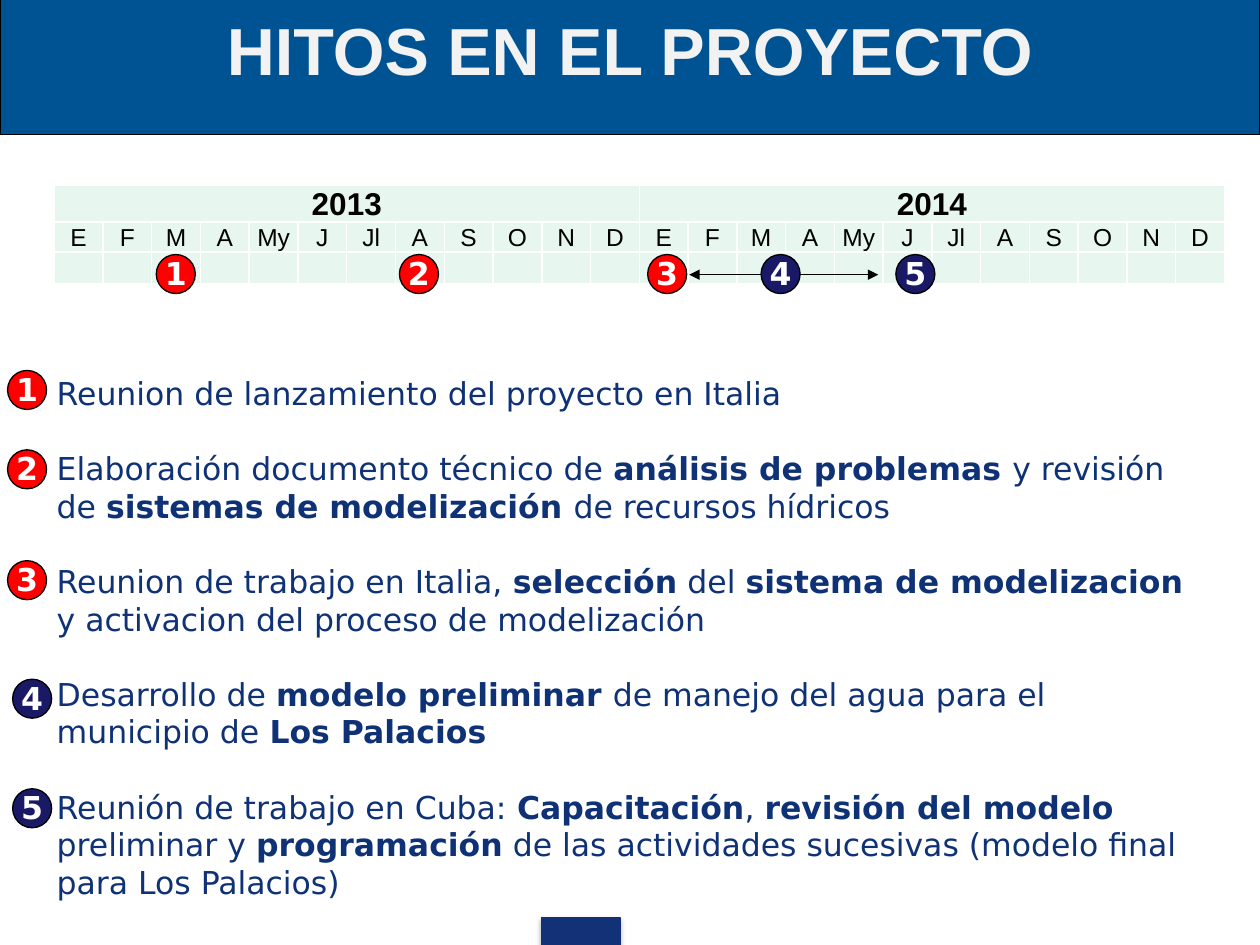
from dataclasses import dataclass

from lxml import etree
from pptx import Presentation
from pptx.dml.color import RGBColor
from pptx.enum.shapes import MSO_CONNECTOR, MSO_SHAPE
from pptx.enum.text import MSO_ANCHOR, MSO_AUTO_SIZE, PP_ALIGN
from pptx.oxml.ns import qn
from pptx.util import Inches, Pt

CENTER, LEFT = PP_ALIGN.CENTER, PP_ALIGN.LEFT
TOP, MIDDLE, BOTTOM = MSO_ANCHOR.TOP, MSO_ANCHOR.MIDDLE, MSO_ANCHOR.BOTTOM
NO_FIT = MSO_AUTO_SIZE.NONE
RECTANGLE, OVAL = MSO_SHAPE.RECTANGLE, MSO_SHAPE.OVAL
STRAIGHT = MSO_CONNECTOR.STRAIGHT


@dataclass(frozen=True)
class Theme:
    banner: str = "005392"
    title: str = "F2F2F2"
    body: str = "0F3277"
    accent: str = "133176"
    cell: str = "E7F6EF"
    done: str = "FF0000"
    planned: str = "191966"
    black: str = "000000"
    white: str = "FFFFFF"
    heading_font: str = "Arial"
    body_font: str = "DejaVu Sans"
    title_size: float = 38
    text_size: float = 18
    month_size: float = 14
    line_pitch: float = 21.5
    outline: float = 0.75


class SlideBuilder:
    def __init__(self, slide, theme):
        self.slide = slide
        self.theme = theme

    def style_font(self, font, name, size, color, bold=False):
        font.name, font.size, font.bold = name, Pt(size), bold
        font.color.rgb = RGBColor.from_string(color)

    def paint(self, shape, fill, line):
        shape.fill.solid()
        shape.fill.fore_color.rgb = RGBColor.from_string(fill)
        shape.line.color.rgb = RGBColor.from_string(line)
        shape.line.width = Pt(self.theme.outline)

    def place(self, shape, left, top, width, height):
        shape.left, shape.top = Inches(left), Inches(top)
        shape.width, shape.height = Inches(width), Inches(height)

    def title(self, text, box):
        t = self.theme
        banner = self.slide.shapes.title
        self.place(banner, *box)
        self.paint(banner, t.banner, t.black)
        frame = banner.text_frame
        frame.text = text
        frame.auto_size, frame.vertical_anchor = NO_FIT, TOP
        frame.margin_top = Inches(0.1)
        heading = frame.paragraphs[0]
        heading.alignment = CENTER
        self.style_font(heading.runs[0].font, t.heading_font, t.title_size, t.title, True)

    def body(self, items, box):
        """Write one paragraph per item; ** switches bold on and off."""
        t = self.theme
        body = self.slide.placeholders[1]
        self.place(body, *box)
        frame = body.text_frame
        frame.auto_size, frame.vertical_anchor, frame.word_wrap = NO_FIT, TOP, True
        for i, item in enumerate(items):
            paragraph = frame.add_paragraph() if i else frame.paragraphs[0]
            paragraph.alignment = LEFT
            paragraph.line_spacing = Pt(t.line_pitch)
            paragraph.space_before = Pt(t.line_pitch if i else 0)
            paragraph.space_after = Pt(0)
            properties = paragraph._p.get_or_add_pPr()
            properties.set("marL", "0")
            properties.set("indent", "0")
            etree.SubElement(properties, qn("a:buNone"))
            for j, piece in enumerate(item.split("**")):
                if piece:
                    run = paragraph.add_run()
                    run.text = piece
                    self.style_font(run.font, t.body_font, t.text_size, t.body, j % 2 == 1)

    def footer_mark(self, box):
        mark = self.slide.shapes.add_shape(RECTANGLE, *map(Inches, box))
        self.paint(mark, self.theme.accent, self.theme.accent)
        effects = etree.SubElement(mark._element.spPr, qn("a:effectLst"))
        shadow = etree.SubElement(effects, qn("a:outerShdw"), blurRad=str(Pt(3.1)),
                                  dist=str(Pt(1.8)), dir="5400000", rotWithShape="0")
        color = etree.SubElement(shadow, qn("a:srgbClr"), val=self.theme.black)
        etree.SubElement(color, qn("a:alpha"), val="35000")

    def cell(self, cell, text, size, bold=False):
        t = self.theme
        cell.margin_left = cell.margin_right = cell.margin_top = Inches(0.01)
        cell.margin_bottom = 0
        cell.vertical_anchor = BOTTOM
        properties = cell._tc.get_or_add_tcPr()
        for side in ("lnL", "lnR", "lnT", "lnB"):
            border = etree.SubElement(properties, qn(f"a:{side}"), w=str(Pt(1)))
            fill = etree.SubElement(border, qn("a:solidFill"))
            etree.SubElement(fill, qn("a:srgbClr"), val=t.white)
        cell.fill.solid()
        cell.fill.fore_color.rgb = RGBColor.from_string(t.cell)
        paragraph = cell.text_frame.paragraphs[0]
        paragraph.alignment = CENTER
        if text:
            paragraph.text = text
            self.style_font(paragraph.runs[0].font, t.heading_font, size, t.black, bold)
        else:
            etree.SubElement(paragraph._p, qn("a:endParaRPr"), sz=str(size * 100))

    def calendar(self, years, months, box, row_heights):
        t = self.theme
        count = len(years) * len(months)
        table = self.slide.shapes.add_table(len(row_heights), count, *map(Inches, box)).table
        table.first_row = table.horz_banding = False
        for column in table.columns:
            column.width = Inches(box[2] / count)
        for row, height in zip(table.rows, row_heights):
            row.height = Inches(height)
        for i in range(count):
            year, month = divmod(i, len(months))
            self.cell(table.cell(0, i), "" if month else years[year], t.text_size, True)
            self.cell(table.cell(1, i), months[month], t.month_size)
            self.cell(table.cell(2, i), "", t.month_size)
        for first in range(0, count, len(months)):
            table.cell(0, first).merge(table.cell(0, first + len(months) - 1))

    def badge(self, number, left, top):
        t = self.theme
        badge = self.slide.shapes.add_shape(OVAL, *map(Inches, (left, top, 0.31, 0.31)))
        badge.shadow.inherit = False
        self.paint(badge, t.done if number <= 3 else t.planned, t.black)
        frame = badge.text_frame
        frame.margin_left = frame.margin_right = frame.margin_top = 0
        frame.margin_bottom = Inches(0.02)
        frame.word_wrap, frame.vertical_anchor = False, MIDDLE
        frame.text = str(number)
        label = frame.paragraphs[0]
        label.alignment = CENTER
        self.style_font(label.runs[0].font, t.body_font, t.text_size, t.white, True)

    def double_arrow(self, start, end, y):
        ends = map(Inches, (start, y, end, y))
        arrow = self.slide.shapes.add_connector(STRAIGHT, *ends)
        arrow.line.color.rgb = RGBColor.from_string(self.theme.black)
        arrow.line.width = Pt(self.theme.outline)
        line = arrow.line._get_or_add_ln()
        for tip in ("headEnd", "tailEnd"):
            etree.SubElement(line, qn(f"a:{tip}"), type="triangle")
        etree.SubElement(arrow._element.spPr, qn("a:effectLst"))


YEARS = ["2013", "2014"]
MONTHS = "E F M A My J Jl A S O N D".split()
MILESTONES = [
    "Reunion de lanzamiento del proyecto en Italia",
    "Elaboración documento técnico de **análisis de problemas **y revisión de "
    "**sistemas de modelización **de recursos hídricos",
    "Reunion de trabajo en Italia, **selección** del **sistema de modelizacion **"
    "y activacion del proceso de modelización",
    "Desarrollo de **modelo preliminar **de manejo del agua para el municipio de "
    "**Los Palacios**",
    "Reunión de trabajo en Cuba: **Capacitación**, **revisión del modelo **"
    "preliminar y **programación** de las actividades sucesivas "
    "(modelo final para Los Palacios)",
]
TIMELINE_LEFTS = [1.24, 3.17, 5.14, 6.04, 7.11]
LIST_POSITIONS = [(0.06, 2.94), (0.06, 3.57), (0.06, 4.45), (0.1, 5.39), (0.1, 6.26)]


def main():
    presentation = Presentation()
    presentation.slide_width, presentation.slide_height = Inches(10), Inches(7.5)
    slide = presentation.slides.add_slide(presentation.slide_layouts[1])
    builder = SlideBuilder(slide, Theme())

    # Banner and footer
    builder.title("HITOS EN EL PROYECTO", (0, -0.03, 10, 1.1))
    builder.footer_mark((4.3, 7.28, 0.62, 0.22))

    # Calendar with the milestones on it
    builder.calendar(YEARS, MONTHS, (0.43, 1.47, 9.29, 0.78), (0.29, 0.24, 0.25))
    builder.double_arrow(5.47, 6.97, 2.18)
    for number, left in enumerate(TIMELINE_LEFTS, 1):
        builder.badge(number, left, 2.02)

    # Numbered list of milestones
    builder.body(MILESTONES, (0.35, 2.92, 9.29, 4.3))
    for number, (left, top) in enumerate(LIST_POSITIONS, 1):
        builder.badge(number, left, top)

    presentation.save("out.pptx")


if __name__ == "__main__":
    main()
